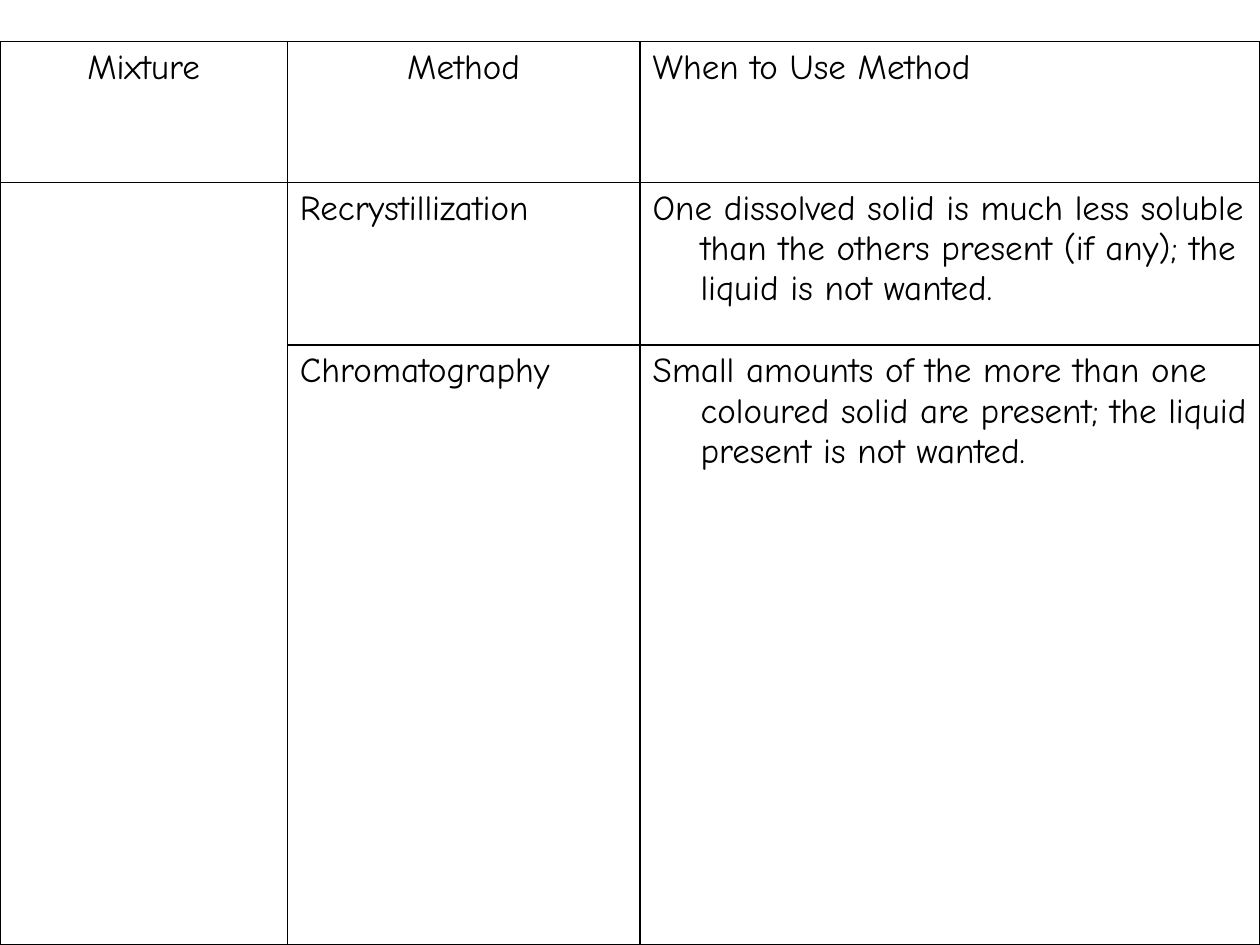
import dataclasses

import pptx
import pptx.dml.color
import pptx.enum.text
import pptx.oxml
import pptx.oxml.ns
import pptx.util

Inches = pptx.util.Inches
Pt = pptx.util.Pt


@dataclasses.dataclass(frozen=True)
class Theme:
    font: str = "Comic Neue"
    size: int = 20
    ink: str = "000000"
    border: int = 1
    hanging: float = 0.38


THEME = Theme()
SLIDE_W, SLIDE_H = 10, 7.5
TABLE_TOP = 0.33
COL_SHARES = (0.228, 0.28, 0.492)
ROW_SHARES = (0.156, 0.18, 0.664)

HEADINGS = ("Mixture", "Method", "When to Use Method")
METHODS = (
    ("", "Recrystillization",
     "One dissolved solid is much less soluble than the others present (if any); "
     "the liquid is not wanted."),
    ("", "Chromatography",
     "Small amounts of the more than one coloured solid are present; "
     "the liquid present is not wanted."),
)


def set_borders(cell):
    tcPr = cell._tc.get_or_add_tcPr()
    for i, side in enumerate(("lnL", "lnR", "lnT", "lnB")):
        tcPr.insert(i, pptx.oxml.parse_xml(
            f'<a:{side} {pptx.oxml.ns.nsdecls("a")} w="{Pt(THEME.border)}">'
            f'<a:solidFill><a:srgbClr val="{THEME.ink}"/></a:solidFill></a:{side}>'))


def write_cell(cell, text, centred):
    p = cell.text_frame.paragraphs[0]
    if centred:
        p.alignment = pptx.enum.text.PP_ALIGN.CENTER
    pPr = p._p.get_or_add_pPr()
    pPr.set("marL", str(Inches(THEME.hanging)))
    pPr.set("indent", str(-Inches(THEME.hanging)))
    r = p.add_run()
    r.text = text
    r.font.name = THEME.font
    r.font.size = Pt(THEME.size)
    r.font.color.rgb = pptx.dml.color.RGBColor.from_string(THEME.ink)


def add_methods_table(s, left, top, width, height):
    rows = (HEADINGS, *METHODS)
    frame = s.shapes.add_table(len(rows), len(HEADINGS), Inches(left), Inches(top),
                               Inches(width), Inches(height))
    table = frame.table
    table.first_row = table.horz_banding = False
    for col, share in zip(table.columns, COL_SHARES):
        col.width = Inches(width * share)
    for row, share in zip(table.rows, ROW_SHARES):
        row.height = Inches(height * share)
    for i, texts in enumerate(rows):
        for j, text in enumerate(texts):
            cell = table.cell(i, j)
            cell.fill.background()
            set_borders(cell)
            if text:
                write_cell(cell, text, centred=i == 0 and j < 2)
    table.cell(1, 0).merge(table.cell(len(rows) - 1, 0))


def main():
    prs = pptx.Presentation()
    prs.slide_width, prs.slide_height = Inches(SLIDE_W), Inches(SLIDE_H)
    s = prs.slides.add_slide(prs.slide_layouts[6])
    add_methods_table(s, 0, TABLE_TOP, SLIDE_W, SLIDE_H - TABLE_TOP)
    prs.save("out.pptx")


if __name__ == "__main__":
    main()
